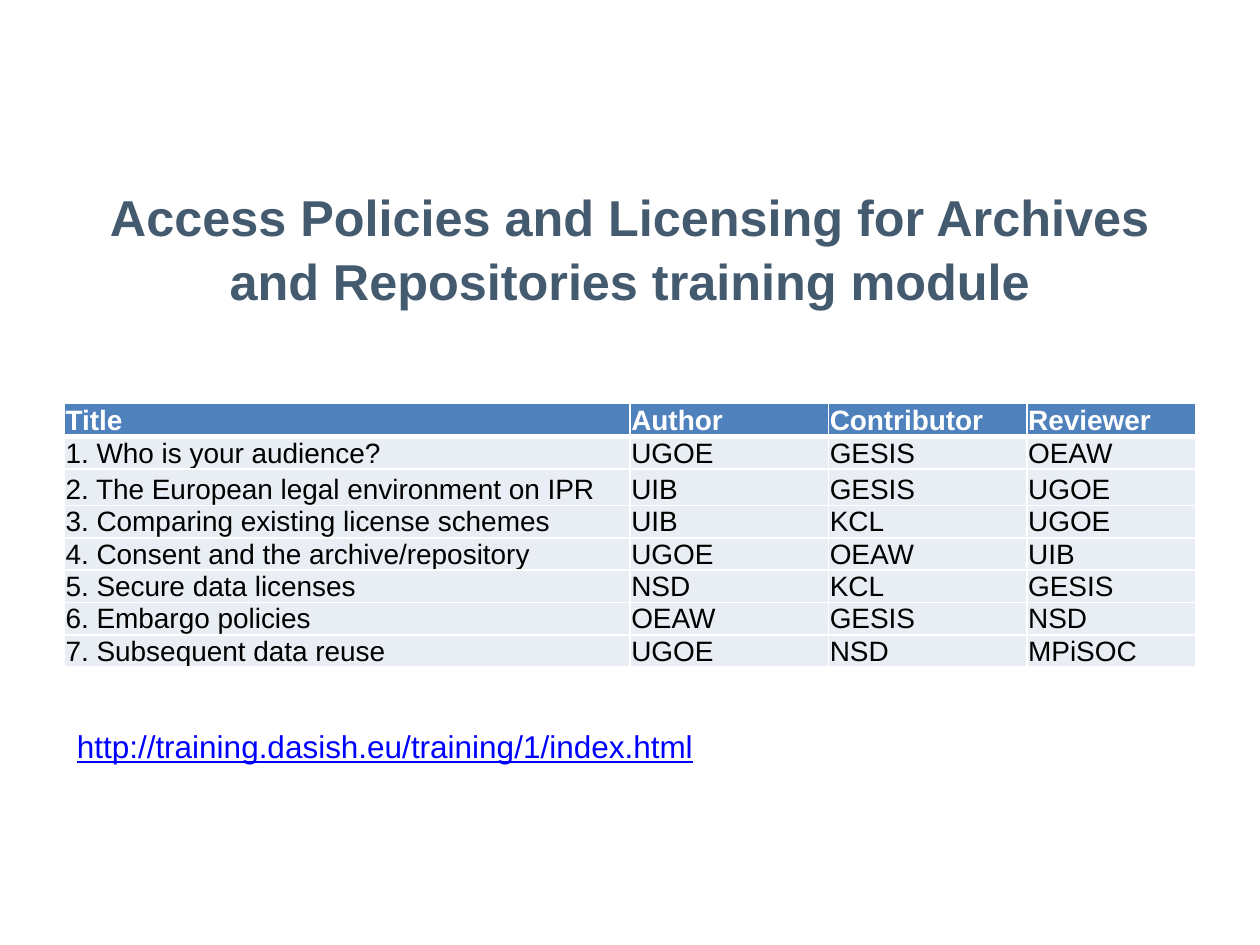
from lxml.etree import SubElement
from pptx import Presentation
from pptx.dml.color import RGBColor as RGB
from pptx.enum.text import MSO_ANCHOR as Anchor, MSO_AUTO_SIZE as Fit, PP_ALIGN as Align
from pptx.oxml.ns import qn
from pptx.util import Pt

COLORS = {"title": "445A6F", "head": "4F81BD", "body": "E9EDF4",
          "white": "FFFFFF", "text": "000000", "link": "0000FF"}
FONT = "Arial"
COLS = [323.3, 113.4, 113.4, 96.5]
HEIGHTS = [19.2, 18.3, 20.8] + [18.3] * 5
ROWS = [
    ("Title", "Author", "Contributor", "Reviewer"),
    ("1. Who is your audience?", "UGOE", "GESIS", "OEAW"),
    ("2. The European legal environment on IPR", "UIB", "GESIS", "UGOE"),
    ("3. Comparing existing license schemes", "UIB", "KCL", "UGOE"),
    ("4. Consent and the archive/repository", "UGOE", "OEAW", "UIB"),
    ("5. Secure data licenses", "NSD", "KCL", "GESIS"),
    ("6. Embargo policies", "OEAW", "GESIS", "NSD"),
    ("7. Subsequent data reuse", "UGOE", "NSD", "MPiSOC"),
]


def color(name):
    """Return the named colour."""
    return RGB.from_string(COLORS[name])


def add_run(para, text, size, tint, bold=False, line=False):
    """Add one formatted run to a paragraph."""
    run = para.add_run()
    run.text = text
    font = run.font
    font.name, font.size, font.bold, font.underline = FONT, Pt(size), bold, line
    font.color.rgb = color(tint)


def add_edges(cell, widths):
    """Draw white cell borders, given widths by side, ahead of the fill."""
    props = cell._tc.get_or_add_tcPr()
    for side, width in widths.items():
        edge = SubElement(props, qn("a:" + side), w=str(Pt(width)))
        fill = SubElement(edge, qn("a:solidFill"))
        SubElement(fill, qn("a:srgbClr"), val=COLORS["white"])


def add_title(slide, left, top, width, height):
    """Place and format the title."""
    title = slide.shapes.title
    title.left, title.top = Pt(left), Pt(top)
    title.width, title.height = Pt(width), Pt(height)
    frame = title.text_frame
    frame.word_wrap, frame.auto_size = True, Fit.NONE
    frame.vertical_anchor = Anchor.MIDDLE
    para = frame.paragraphs[0]
    para.alignment, para.line_spacing = Align.CENTER, 1.05
    add_run(para, "Access Policies and Licensing for Archives "
            "and Repositories training module", 28.8, "title", bold=True)


def add_cell(cell, text, head, under):
    """Fill one table cell, with a thick edge under the head row."""
    cell.margin_left = cell.margin_right = cell.margin_top = Pt(0.7)
    cell.margin_bottom = Pt(0)
    cell.vertical_anchor = Anchor.BOTTOM
    add_edges(cell, {"lnL": 1, "lnR": 1, "lnT": 3 if under else 1,
                     "lnB": 3 if head else 1})
    cell.fill.solid()
    cell.fill.fore_color.rgb = color("head" if head else "body")
    add_run(cell.text_frame.paragraphs[0], text, 16,
            "white" if head else "text", bold=head)


def add_grid(slide, left, top):
    """Place the table of modules."""
    grid = slide.shapes.add_table(len(ROWS), len(COLS), Pt(left), Pt(top),
                                  Pt(sum(COLS)), Pt(sum(HEIGHTS))).table
    grid.horz_banding = False
    for col, width in zip(grid.columns, COLS):
        col.width = Pt(width)
    for row, height in zip(grid.rows, HEIGHTS):
        row.height = Pt(height)
    for r, row in enumerate(ROWS):
        for c, text in enumerate(row):
            add_cell(grid.cell(r, c), text, r == 0, r == 1)


def add_link(slide, left, top, width, height):
    """Place the web address."""
    box = slide.shapes.add_textbox(Pt(left), Pt(top), Pt(width), Pt(height))
    frame = box.text_frame
    frame.word_wrap, frame.auto_size = False, Fit.SHAPE_TO_FIT_TEXT
    add_run(frame.paragraphs[0], "http://training.dasish.eu/training/1/index.html",
            18, "link", line=True)


def main():
    """Build and save the slide."""
    deck = Presentation()
    deck.slide_width, deck.slide_height = Pt(720), Pt(540)
    slide = deck.slides.add_slide(deck.slide_layouts[5])
    add_title(slide, 36, 96, 648, 90)
    add_grid(slide, 36.8, 230.4)
    add_link(slide, 36.8, 412, 370, 29)
    deck.save("out.pptx")


if __name__ == "__main__":
    main()
